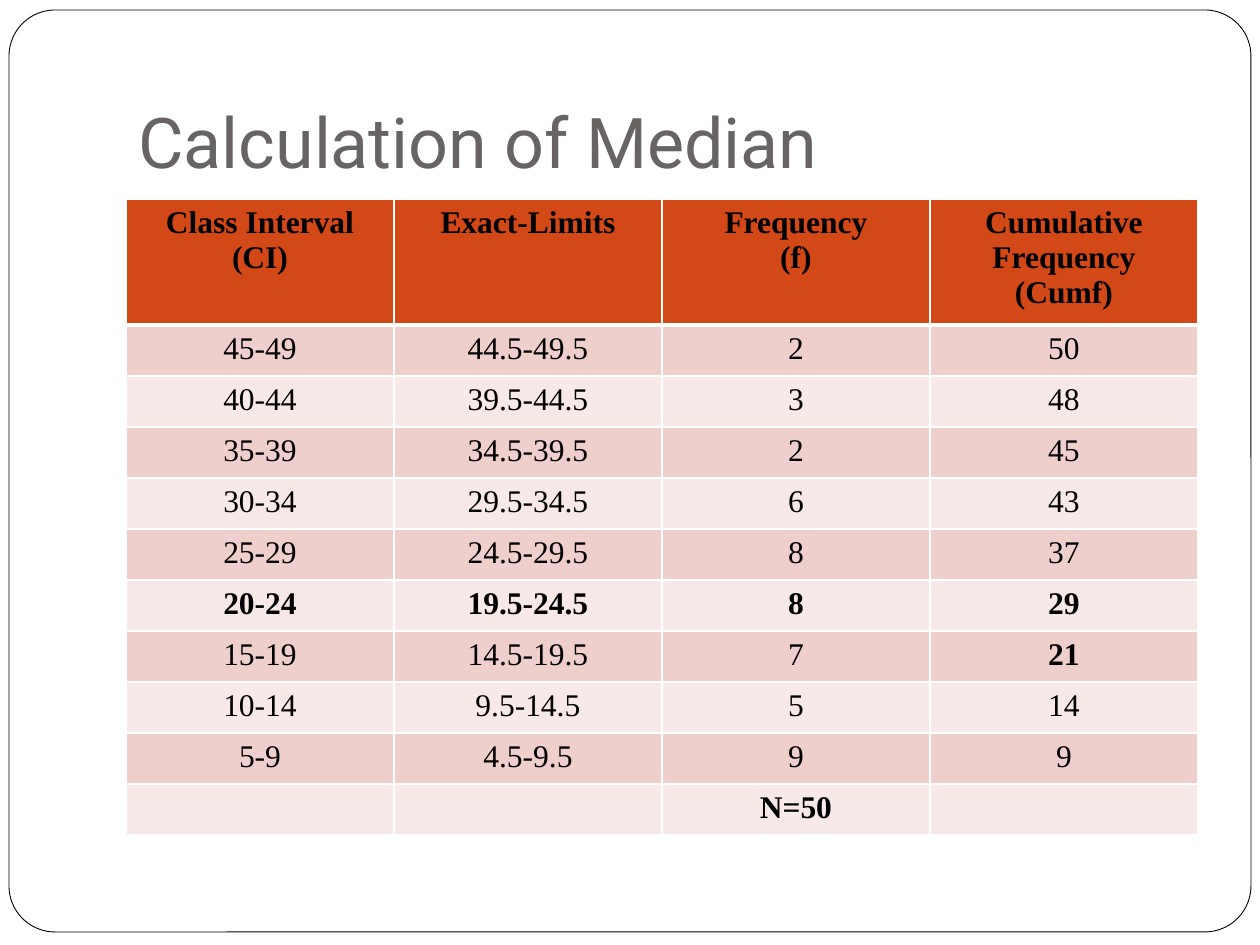
from dataclasses import dataclass

from lxml.etree import SubElement
from pptx import Presentation
from pptx.dml.color import RGBColor
from pptx.enum.shapes import MSO_SHAPE as Shape
from pptx.enum.text import MSO_ANCHOR as Anchor, PP_ALIGN as Align
from pptx.oxml.ns import qn
from pptx.util import Pt

PX = 914400 // 126


@dataclass(frozen=True)
class Theme:
    paper: str = "FFFFFF"
    ink: str = "000000"
    title: str = "696464"
    header: str = "D34817"
    bands: tuple = ("EFCFCC", "F7E9E8")
    title_font: str = "Roboto"
    table_font: str = "Times New Roman"
    title_size: int = 40
    table_size: int = 18


theme = Theme()


def write(frame, text, *, font, size, color, bold=False, align=Align.LEFT):
    """Fill a text frame, one paragraph for each line of text."""
    for index, line in enumerate(text.split("\n")):
        para = frame.paragraphs[0] if index == 0 else frame.add_paragraph()
        para.alignment = align
        para.font.size = Pt(size)
        if not line:
            continue
        span = para.add_run()
        span.text = line
        span.font.name = font
        span.font.size = Pt(size)
        span.font.bold = bold
        span.font.color.rgb = RGBColor.from_string(color)


def draw_borders(cell, color, **widths):
    """Set cell borders in points, given in the order L, R, T, B."""
    properties = cell._tc.get_or_add_tcPr()
    for side, width in widths.items():
        line = SubElement(properties, qn(f"a:ln{side}"), w=str(Pt(width)))
        fill = SubElement(line, qn("a:solidFill"))
        SubElement(fill, qn("a:srgbClr"), val=color)


deck = Presentation()
deck.slide_width, deck.slide_height = 1260 * PX, 945 * PX
page = deck.slides.add_slide(deck.slide_layouts[6])

# Rounded page frame
frame = page.shapes.add_shape(
    Shape.ROUNDED_RECTANGLE, 9 * PX, 10 * PX, 1242 * PX, 922 * PX)
frame.adjustments[0] = 0.05
frame.shadow.inherit = False
frame.fill.solid()
frame.fill.fore_color.rgb = RGBColor.from_string(theme.paper)
frame.line.color.rgb = RGBColor.from_string(theme.ink)
frame.line.width = Pt(0.5)

# Title
title = page.shapes.add_textbox(126 * PX, 38 * PX, 1071 * PX, 157 * PX)
title.text_frame.word_wrap = True
title.text_frame.vertical_anchor = Anchor.BOTTOM
title.text_frame.margin_bottom = 13 * PX
write(title.text_frame, "Calculation of Median", font=theme.title_font,
      size=theme.title_size, color=theme.title)

# Frequency table
rows = [
    ("Class Interval (CI)", "Exact-Limits", "Frequency\n(f)",
     "Cumulative Frequency (Cumf)"),
    ("45-49", "44.5-49.5", "2", "50"),
    ("40-44", "39.5-44.5", "3", "48"),
    ("35-39", "34.5-39.5", "2", "45"),
    ("30-34", "29.5-34.5", "6", "43"),
    ("25-29", "24.5-29.5", "8", "37"),
    ("20-24", "19.5-24.5", "8", "29"),
    ("15-19", "14.5-19.5", "7", "21"),
    ("10-14", "9.5-14.5", "5", "14"),
    ("5-9", "4.5-9.5", "9", "9"),
    ("", "", "N=50", ""),
]
header_row, median_row, total_row = 0, 6, 10
bold_rows = {header_row, median_row, total_row}
cumulative_below_median = (7, 3)
header_height, row_height, column_width = 117, 51, 268

table = page.shapes.add_table(
    len(rows), len(rows[0]), 126 * PX, 199 * PX,
    len(rows[0]) * column_width * PX,
    (header_height + (len(rows) - 1) * row_height) * PX).table
table.horz_banding = False
for column in table.columns:
    column.width = column_width * PX

for r, values in enumerate(rows):
    is_header = r == header_row
    table.rows[r].height = (header_height if is_header else row_height) * PX
    for c, text in enumerate(values):
        cell = table.cell(r, c)
        draw_borders(cell, theme.paper, L=1, R=1,
                     T=3 if r == header_row + 1 else 1,
                     B=3 if is_header else 1)
        cell.fill.solid()
        cell.fill.fore_color.rgb = RGBColor.from_string(
            theme.header if is_header else theme.bands[(r - 1) % 2])
        write(cell.text_frame, text, font=theme.table_font,
              size=theme.table_size, color=theme.ink, align=Align.CENTER,
              bold=r in bold_rows or (r, c) == cumulative_below_median)

deck.save("out.pptx")
